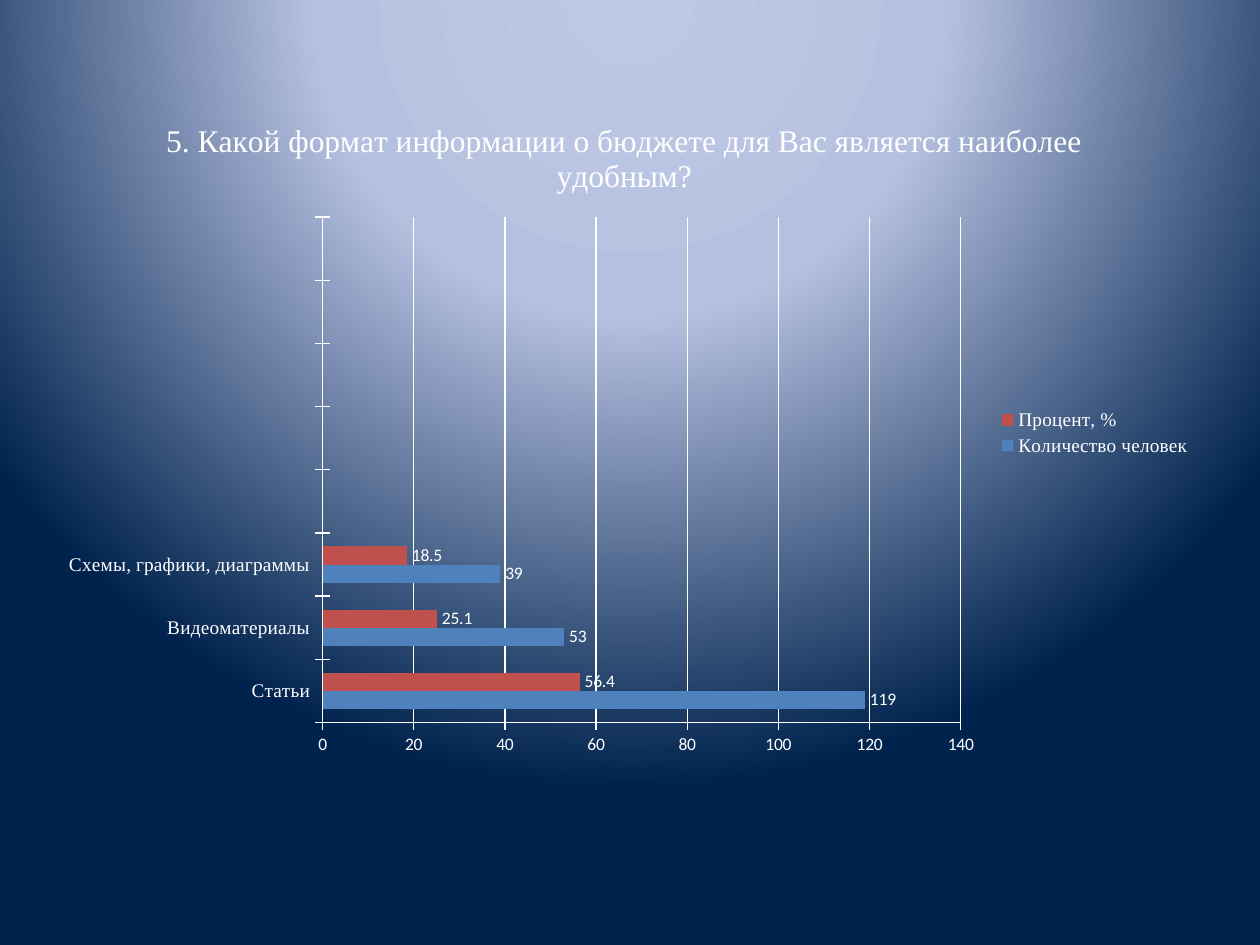
from lxml.etree import SubElement
from pptx import Presentation
from pptx.chart.data import CategoryChartData
from pptx.dml.color import RGBColor
from pptx.enum.chart import XL_CHART_TYPE, XL_LABEL_POSITION, XL_LEGEND_POSITION, XL_TICK_MARK
from pptx.oxml import parse_xml
from pptx.oxml.ns import nsdecls, qn
from pptx.util import Inches, Pt

WHITE = "FFFFFF"
SERIF = "Times New Roman"
TITLE = "5. Какой формат информации о бюджете для Вас является наиболее удобным?"
CATEGORIES = ["Статьи", "Видеоматериалы", "Схемы, графики, диаграммы"]
EMPTY_ROWS = 5
SERIES = [
    ("Количество человек", [119, 53, 39], "4F81BD", "General"),
    ("Процент, %", [56.4, 25.1, 18.5], "C0504D", "0.0"),
]
GRADIENT = [(0, "BFC9E5"), (40, "B5C0E0"), (100, "00234D")]
PLOT_AREA = {"x": 0.24, "y": 0.18, "w": 0.55, "h": 0.75}


def color(value):
    """Turn a hex string into a colour."""
    return RGBColor.from_string(value)


def format_font(font, size=10, name="Calibri", fill=WHITE, bold=False):
    """Apply size, typeface, colour and weight to a font."""
    font.size = Pt(size)
    font.name = name
    font.bold = bold
    font.color.rgb = color(fill)


def write_text(text_frame, text, **text_format):
    """Put formatted text into a text frame."""
    run = text_frame.paragraphs[0].add_run()
    run.text = text
    format_font(run.font, **text_format)


def paint_background(slide):
    """Fill the slide with a circular gradient."""
    slide.background.fill.gradient()
    placeholder_fill = next(slide.element.iter(qn("a:gradFill")))
    stops = "".join(
        f'<a:gs pos="{position * 1000}"><a:srgbClr val="{value}"/></a:gs>'
        for position, value in GRADIENT
    )
    gradient = parse_xml(
        f'<a:gradFill {nsdecls("a")} rotWithShape="1"><a:gsLst>{stops}</a:gsLst>'
        '<a:path path="circle"><a:fillToRect l="50000" t="-80000" r="50000" b="180000"/>'
        "</a:path></a:gradFill>"
    )
    placeholder_fill.getparent().replace(placeholder_fill, gradient)


def format_line(line):
    """Make a chart line thin and white."""
    line.color.rgb = color(WHITE)
    line.width = Pt(0.75)


def format_axis(axis, **text_format):
    """Style an axis line, its ticks and its labels."""
    axis.major_tick_mark = XL_TICK_MARK.CROSS
    axis.minor_tick_mark = XL_TICK_MARK.NONE
    format_line(axis.format.line)
    format_font(axis.tick_labels.font, **text_format)


def format_series(series, fill, number_format):
    """Colour a series and show its values."""
    series.format.fill.solid()
    series.format.fill.fore_color.rgb = color(fill)
    series.invert_if_negative = False
    labels = series.data_labels
    labels.show_value = True
    labels.number_format = number_format
    labels.number_format_is_linked = False
    labels.position = XL_LABEL_POSITION.OUTSIDE_END
    format_font(labels.font)


def place_plot_area(chart):
    """Fix the inner plot area as fractions of the chart."""
    plot_area = next(chart.element.iter(qn("c:plotArea")))
    layout = plot_area.find(qn("c:layout"))
    if layout is None:
        layout = parse_xml(f'<c:layout {nsdecls("c")}/>')
        plot_area.insert(0, layout)
    manual = SubElement(layout, qn("c:manualLayout"))
    settings = {"layoutTarget": "inner", "xMode": "edge", "yMode": "edge", **PLOT_AREA}
    for name, value in settings.items():
        SubElement(manual, qn(f"c:{name}")).set("val", str(value))


def add_survey_chart(slide):
    """Add the bar chart of survey answers."""
    data = CategoryChartData()
    data.categories = CATEGORIES + [""] * EMPTY_ROWS
    for name, values, _, _ in SERIES:
        data.add_series(name, values + [None] * EMPTY_ROWS)
    chart = slide.shapes.add_chart(
        XL_CHART_TYPE.BAR_CLUSTERED,
        Inches(0.35), Inches(0.76), Inches(9.21), Inches(5.35), data,
    ).chart
    format_font(chart.font)
    write_text(chart.chart_title.text_frame, TITLE, size=18, name=SERIF)
    chart.chart_title.include_in_layout = False

    plot = chart.plots[0]
    plot.vary_by_categories = False
    plot.gap_width = 150
    for series, (_, _, fill, number_format) in zip(plot.series, SERIES):
        format_series(series, fill, number_format)

    format_axis(chart.category_axis, size=11, name=SERIF)
    value_axis = chart.value_axis
    format_axis(value_axis)
    value_axis.minimum_scale, value_axis.maximum_scale = 0, 140
    value_axis.major_unit = 20
    value_axis.has_major_gridlines = True
    format_line(value_axis.major_gridlines.format.line)

    chart.has_legend = True
    chart.legend.position = XL_LEGEND_POSITION.RIGHT
    chart.legend.include_in_layout = False
    format_font(chart.legend.font, size=11, name=SERIF)
    place_plot_area(chart)


def main():
    """Build the slide and save it."""
    presentation = Presentation()
    presentation.slide_width, presentation.slide_height = Inches(10), Inches(7.5)
    slide = presentation.slides.add_slide(presentation.slide_layouts[6])
    paint_background(slide)
    add_survey_chart(slide)
    presentation.save("out.pptx")


if __name__ == "__main__":
    main()
